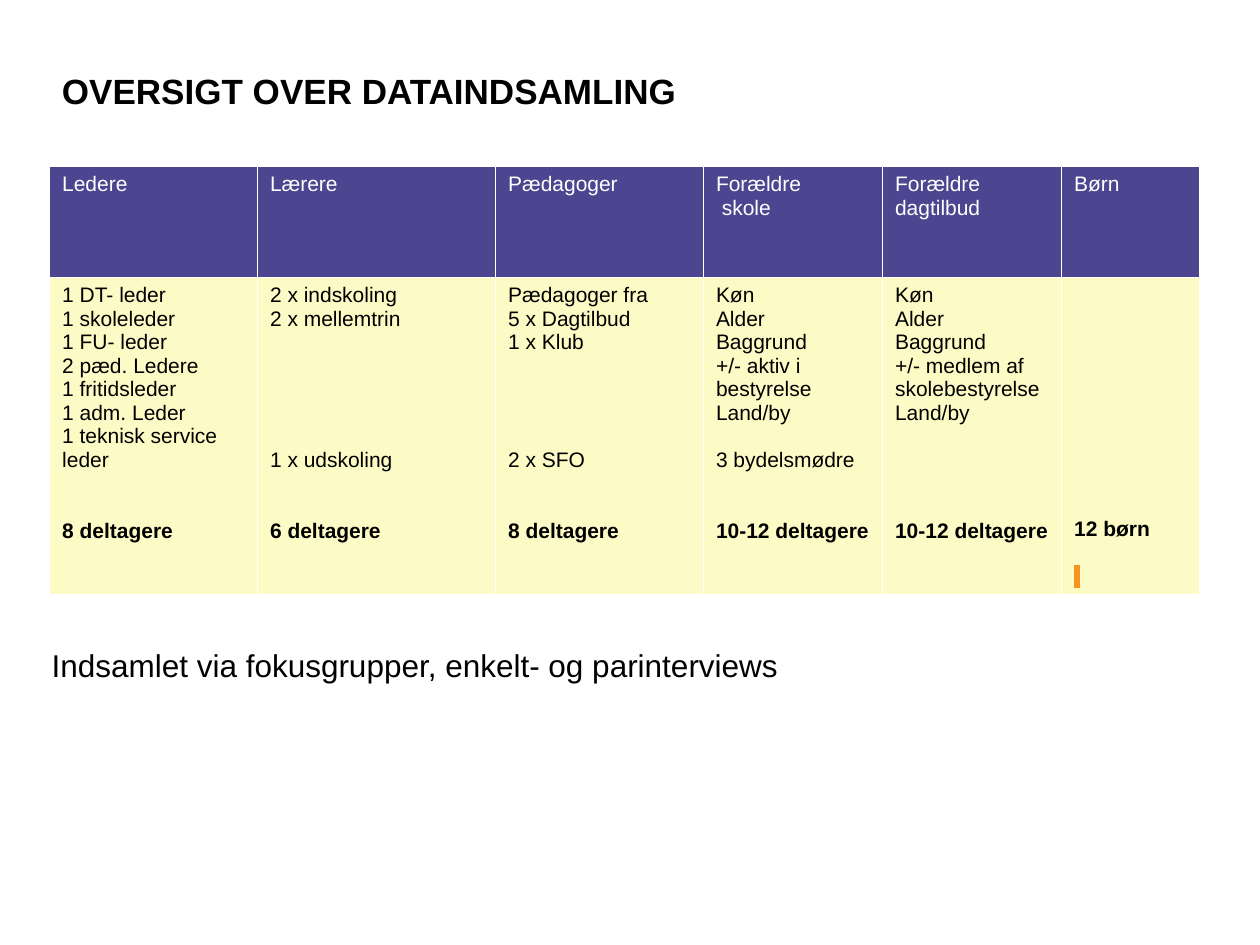
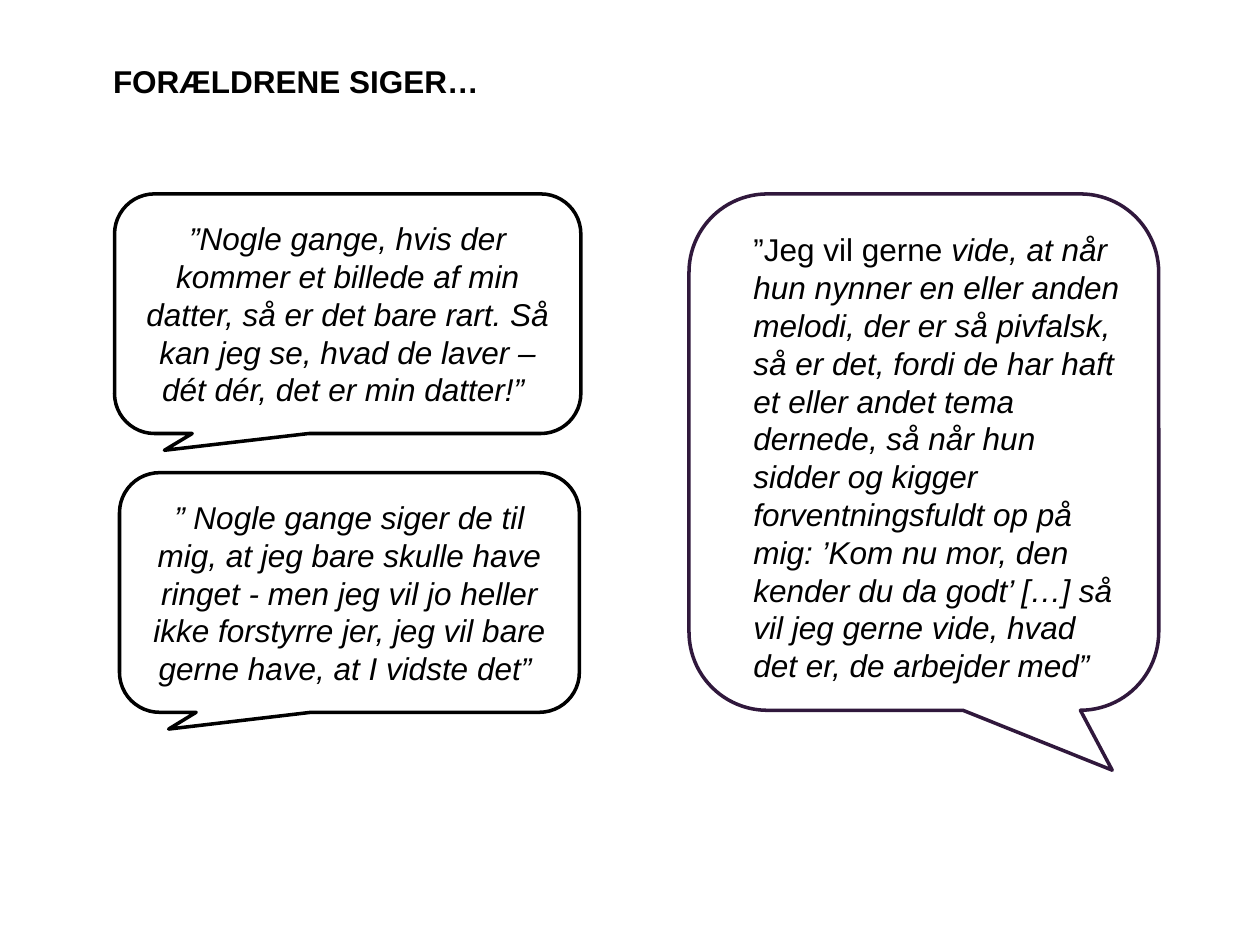
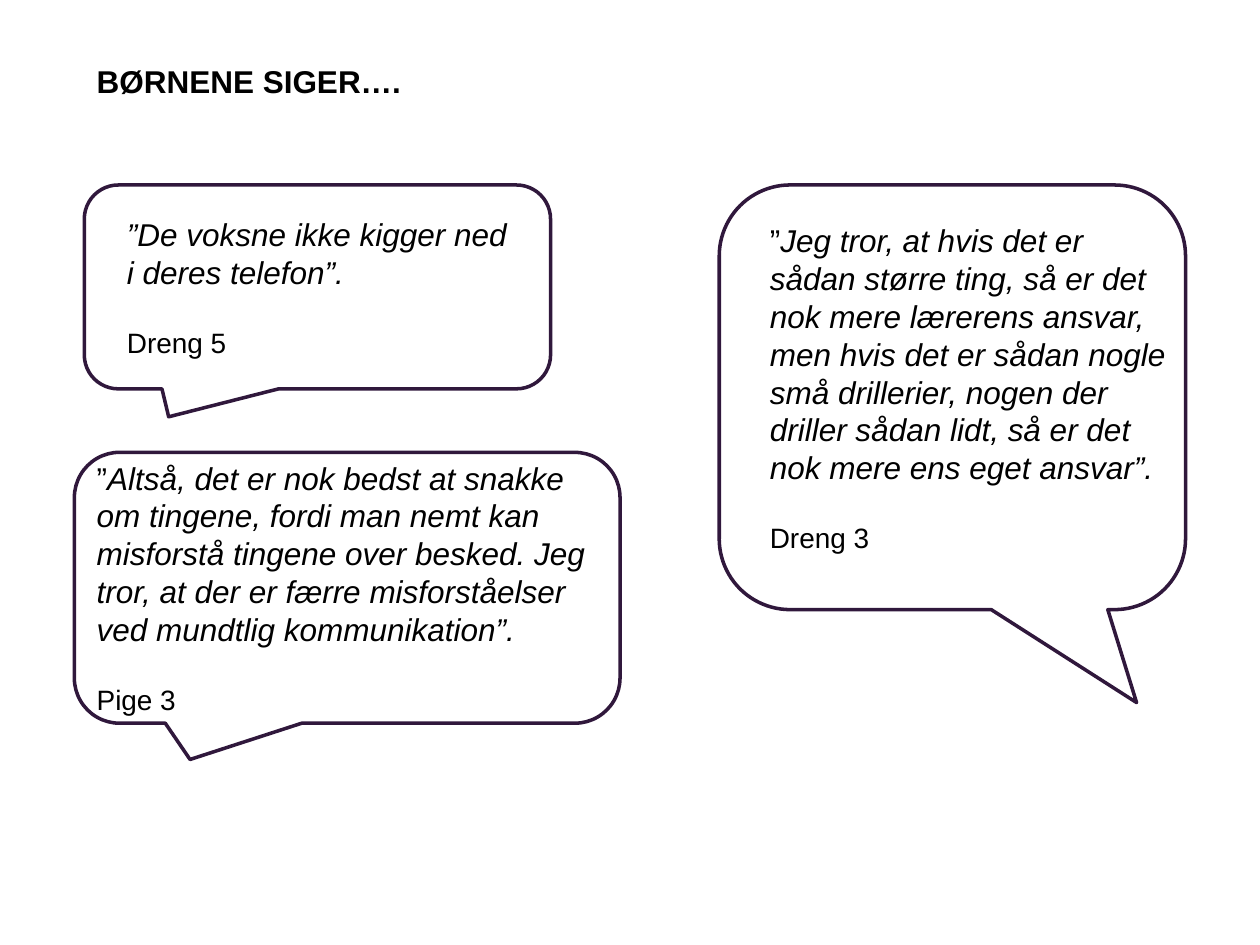
"""Build three slides on data collection and quotes from parents and children."""
from lxml import etree
from pptx import Presentation
from pptx.dml.color import RGBColor
from pptx.enum.shapes import MSO_SHAPE
from pptx.enum.text import MSO_ANCHOR as Anchor, PP_ALIGN as Align
from pptx.oxml.ns import qn
from pptx.util import Cm, Pt

FONT = "Arial"
BLACK, WHITE = "000000", "FFFFFF"
PURPLE, CREAM, ORANGE, PLUM = "4C4690", "FCFBC5", "F7941E", "30183C"
BODY, NAME, CELL = 18, 16, 12
CELL_LINE, NAME_LINE = 13.5, 19.7
TITLE_W, TITLE_H = 18.49, 3

OVERVIEW_TITLE = ("OVERSIGT OVER DATAINDSAMLING", 1, 0.33, 20)
PARENTS_TITLE = ("FORÆLDRENE SIGER…", 2.03, 0.13, BODY)
CHILDREN_TITLE = ("BØRNENE SIGER….", 1.7, 0.13, BODY)

# Each group: width, heading lines, (empty lines above, text) entries, (empty lines above, total)
GROUPS = [
    (4.19, ["Ledere"],
     [(0, "1 DT- leder"), (0, "1 skoleleder"), (0, "1 FU- leder"), (0, "2 pæd. Ledere"),
      (0, "1 fritidsleder"), (0, "1 adm. Leder"), (0, "1 teknisk service leder")],
     (2, "8 deltagere")),
    (4.8, ["Lærere"],
     [(0, "2 x indskoling"), (0, "2 x mellemtrin"), (5, "1 x udskoling")],
     (2, "6 deltagere")),
    (4.19, ["Pædagoger"],
     [(0, "Pædagoger fra"), (0, "5 x Dagtilbud"), (0, "1 x Klub"), (4, "2 x SFO")],
     (2, "8 deltagere")),
    (3.61, ["Forældre", " skole"],
     [(0, "Køn"), (0, "Alder"), (0, "Baggrund"), (0, "+/- aktiv i bestyrelse"),
      (0, "Land/by"), (1, "3 bydelsmødre")],
     (2, "10-12 deltagere")),
    (3.61, ["Forældre", "dagtilbud"],
     [(0, "Køn"), (0, "Alder"), (0, "Baggrund"), (0, "+/- medlem af skolebestyrelse"),
      (0, "Land/by")],
     (4, "10-12 deltagere")),
    (2.79, ["Børn"], [], (0, "12 børn")),
]
ROW_HEIGHTS = (2.24, 6.4)
CAPTION = "Indsamlet via fokusgrupper, enkelt- og parinterviews"

PARENT_BUBBLES = [
    ((2.31, 3.91, 9.4, 4.83), (-0.393, 0.57), BLACK,
     "”Nogle gange, hvis der kommer et billede af min datter, så er det bare rart. "
     "Så kan jeg se, hvad de laver – dét dér, det er min datter!” "),
    ((2.41, 9.53, 9.27, 4.83), (-0.393, 0.57), BLACK,
     "” Nogle gange siger de til mig, at jeg bare skulle have ringet - men jeg vil jo "
     "heller ikke forstyrre jer, jeg vil bare gerne have, at I vidste det” "),
    ((13.89, 3.91, 9.47, 10.41), (0.401, 0.616), PLUM, ""),
]
PARENT_QUOTES = [
    ((14.94, 4.52, 7.95, 9.5), "”Jeg vil gerne ",
     "vide, at når hun nynner en eller anden melodi, der er så pivfalsk, så er det, fordi "
     "de har haft et eller andet tema dernede, så når hun sidder og kigger forventningsfuldt "
     "op på mig: ’Kom nu mor, den kender du da godt’ […] så vil jeg gerne vide, hvad det er, "
     "de arbejder med”", ""),
]
CHILD_BUBBLES = [
    ((1.7, 3.73, 9.4, 4.11), (-0.319, 0.637), PLUM, ""),
    ((14.5, 3.73, 9.4, 8.56), (0.395, 0.719), PLUM, ""),
    ((1.5, 9.12, 11, 5.46), (-0.288, 0.634), PLUM, ""),
]
CHILD_QUOTES = [
    ((2.31, 4.22, 8.2, 3.18), "", "”De voksne ikke kigger ned i deres telefon”.", "Dreng 5"),
    ((15.27, 4.34, 8.61, 7.01), "”",
     "Jeg tror, at hvis det er sådan større ting, så er det nok mere lærerens ansvar, men "
     "hvis det er sådan nogle små drillerier, nogen der driller sådan lidt, så er det nok "
     "mere ens eget ansvar”.", "Dreng 3"),
    ((1.7, 9.12, 10.52, 5.46), "”",
     "Altså, det er nok bedst at snakke om tingene, fordi man nemt kan misforstå tingene "
     "over besked. Jeg tror, at der er færre misforståelser ved mundtlig kommunikation”.",
     "Pige 3"),
]


def rgb(color):
    return RGBColor.from_string(color)


def place(box):
    return [Cm(v) for v in box]


def write(tf, paras, size, color=BLACK, align=Align.LEFT):
    """Write (gap, runs) paragraphs; a run is (text, style), style holds b and i."""
    tf.word_wrap = True
    for i, (gap, runs) in enumerate(paras):
        p = tf.add_paragraph() if i else tf.paragraphs[0]
        p.alignment = align
        if gap:
            p.space_before = Pt(gap)
        for text, style in runs:
            r = p.add_run()
            r.text = text
            r.font.name, r.font.size = FONT, Pt(size)
            r.font.bold, r.font.italic = "b" in style, "i" in style
            r.font.color.rgb = rgb(color)


def add_text(s, box, paras, size, anchor=Anchor.TOP):
    tf = s.shapes.add_textbox(*place(box)).text_frame
    write(tf, paras, size)
    tf.vertical_anchor = anchor
    return tf


def add_slide(prs, title):
    s = prs.slides.add_slide(prs.slide_layouts[6])
    text, left, top, size = title
    add_text(s, (left, top, TITLE_W, TITLE_H), [(0, [(text, "b")])], size, Anchor.MIDDLE)
    return s


def style_cell(cell, color):
    """Fill the cell and give it thin white borders."""
    cell.fill.solid()
    cell.fill.fore_color.rgb = rgb(color)
    tcPr = cell._tc.get_or_add_tcPr()
    for i, side in enumerate("LRTB"):
        ln = etree.Element(qn(f"a:ln{side}"), w=str(Pt(1)))
        fill = etree.SubElement(ln, qn("a:solidFill"))
        etree.SubElement(fill, qn("a:srgbClr"), val=WHITE)
        tcPr.insert(i, ln)


def highlight(r, color):
    mark = etree.Element(qn("a:highlight"))
    etree.SubElement(mark, qn("a:srgbClr"), val=color)
    r.font._element.find(qn("a:solidFill")).addnext(mark)


def add_overview(s):
    width = sum(group[0] for group in GROUPS)
    box = place((1, 3.35, width, sum(ROW_HEIGHTS)))
    table = s.shapes.add_table(len(ROW_HEIGHTS), len(GROUPS), *box).table
    table.horz_banding = False
    for row, height in zip(table.rows, ROW_HEIGHTS):
        row.height = Cm(height)
    for col, (width, heading, entries, total) in enumerate(GROUPS):
        table.columns[col].width = Cm(width)
        head, body = table.cell(0, col), table.cell(1, col)
        style_cell(head, PURPLE)
        style_cell(body, CREAM)
        write(head.text_frame, [(0, [(line, "")]) for line in heading], CELL, WHITE)
        lines = [(*entry, "") for entry in entries] + [(*total, "b")]
        if not entries:
            body.vertical_anchor = Anchor.BOTTOM
            lines.append((1, " ", ""))
        paras = [(gap * CELL_LINE, [(text, style)]) for gap, text, style in lines]
        write(body.text_frame, paras, CELL)
        if not entries:
            highlight(body.text_frame.paragraphs[-1].runs[0], ORANGE)


def add_bubble(s, box, tip, color, text):
    sp = s.shapes.add_shape(MSO_SHAPE.ROUNDED_RECTANGULAR_CALLOUT, *place(box))
    sp.shadow.inherit = False
    for i, value in enumerate((*tip, 0.167)):
        sp.adjustments[i] = value
    sp.fill.background()
    sp.line.color.rgb = rgb(color)
    sp.line.width = Pt(2)
    if text:
        write(sp.text_frame, [(0, [(text, "i")])], BODY, align=Align.CENTER)
        sp.text_frame.vertical_anchor = Anchor.MIDDLE


def add_quote(s, box, lead, quote, speaker):
    runs = [(text, style) for text, style in ((lead, ""), (quote, "i")) if text]
    paras = [(0, runs)]
    if speaker:
        paras.append((NAME_LINE, [(speaker, "")]))
    tf = add_text(s, box, paras, BODY)
    if speaker:
        tf.paragraphs[-1].runs[0].font.size = Pt(NAME)


def main():
    prs = Presentation()
    prs.slide_width, prs.slide_height = Cm(25.4), Cm(19.05)

    s = add_slide(prs, OVERVIEW_TITLE)
    add_overview(s)
    add_text(s, (0.79, 12.9, 22.91, 1.02), [(0, [(CAPTION, "")])], BODY)

    for title, bubbles, quotes in ((PARENTS_TITLE, PARENT_BUBBLES, PARENT_QUOTES),
                                   (CHILDREN_TITLE, CHILD_BUBBLES, CHILD_QUOTES)):
        s = add_slide(prs, title)
        for bubble in bubbles:
            add_bubble(s, *bubble)
        for quote in quotes:
            add_quote(s, *quote)

    prs.save("out.pptx")


if __name__ == "__main__":
    main()
